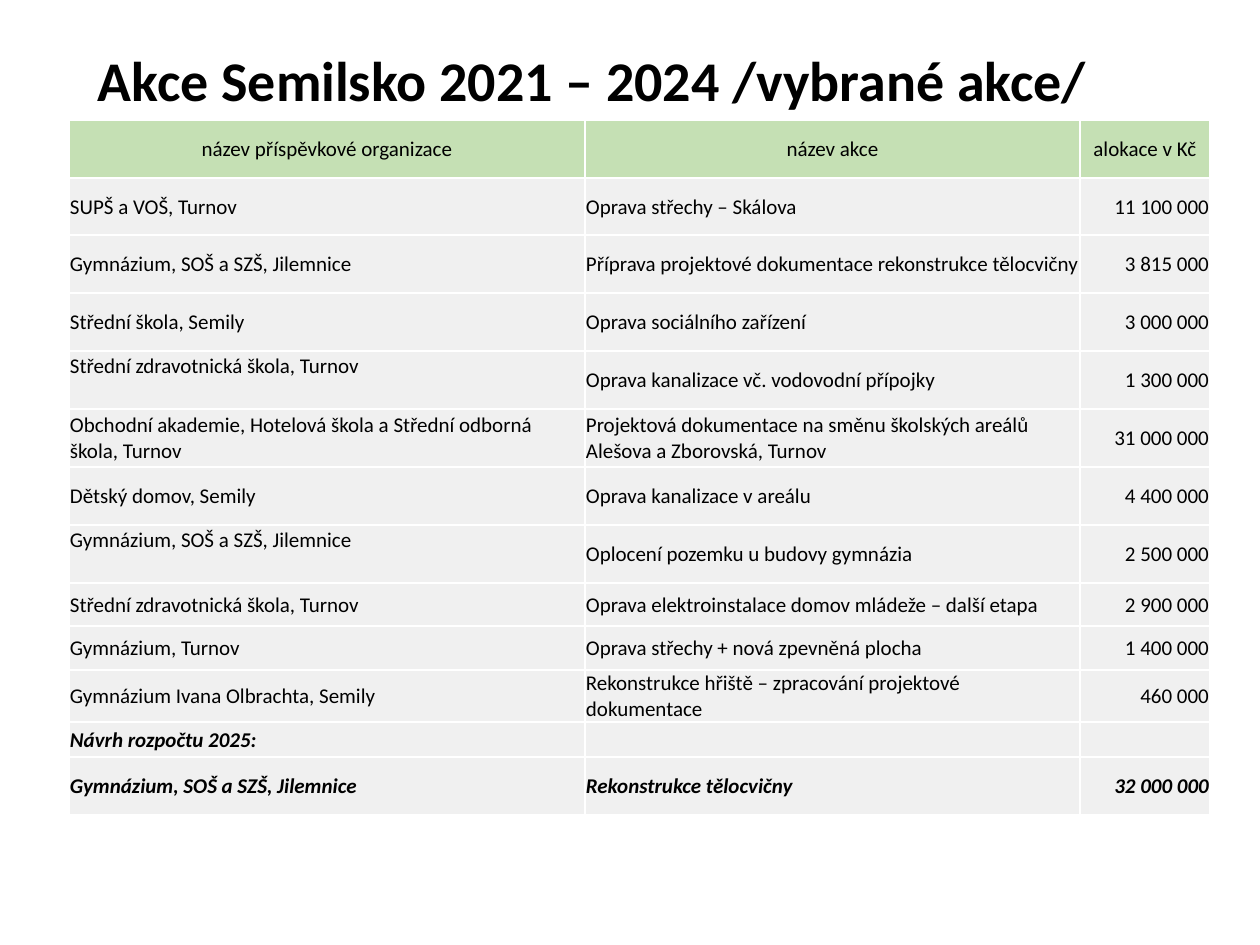
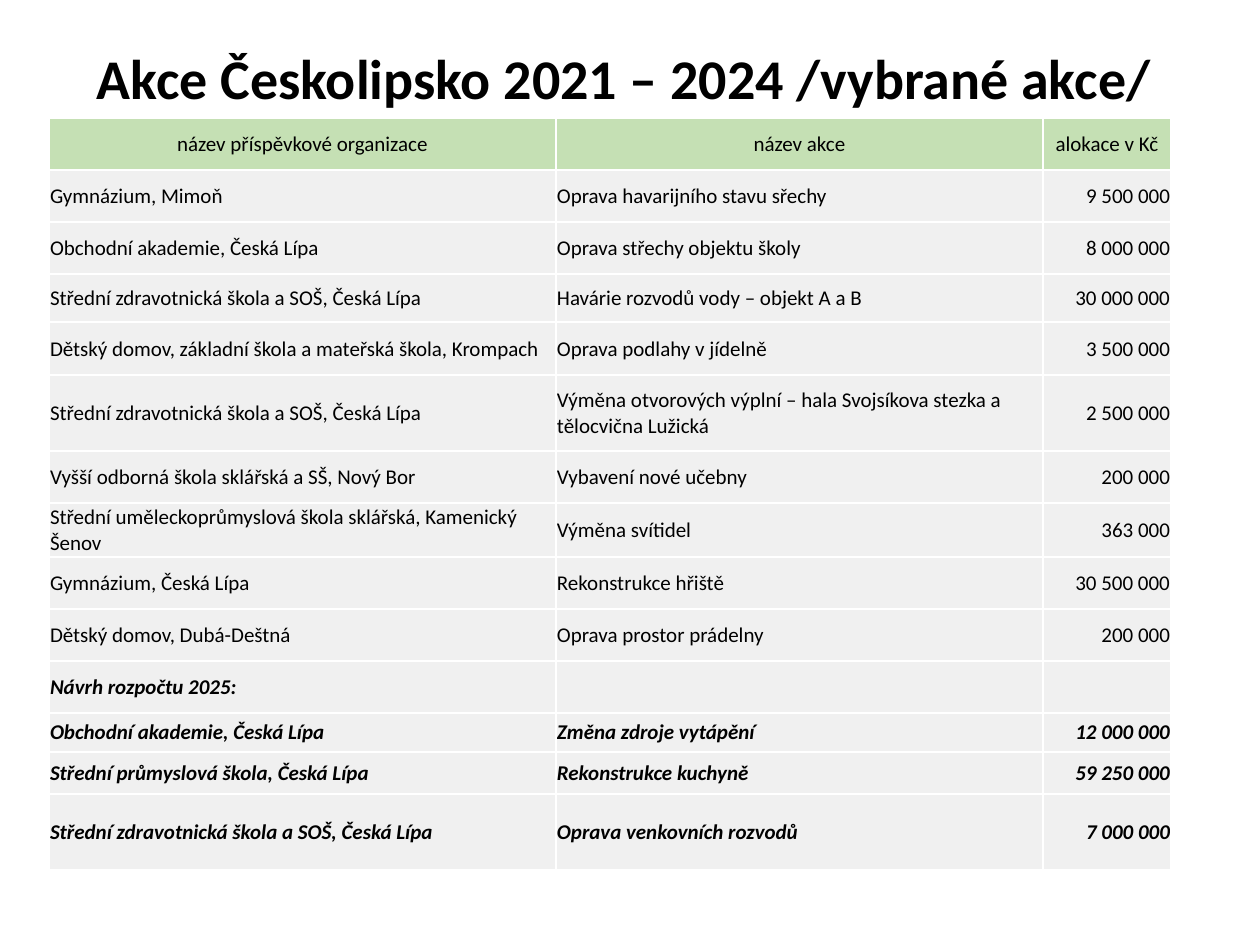
from lxml.etree import SubElement
from pptx import Presentation
from pptx.dml.color import RGBColor
from pptx.enum.text import MSO_ANCHOR as Anchor, MSO_AUTO_SIZE as Fit, PP_ALIGN as Align
from pptx.oxml.ns import qn
from pptx.util import Emu, Pt

BLACK, WHITE, GREEN, GRAY = "000000", "FFFFFF", "C5E0B4", "F0F0F0"
FONT = "Calibri"
SIZE = 12
HEAD = ("název příspěvkové organizace", "název akce", "alokace v Kč")
SIDES = (Align.LEFT, Align.LEFT, Align.RIGHT)
PLAN = ("Návrh rozpočtu 2025:", "", "")

SEMILY = [
    ("SUPŠ a VOŠ, Turnov", "Oprava střechy – Skálova", "11 100 000"),
    ("Gymnázium, SOŠ a SZŠ, Jilemnice", "Příprava projektové dokumentace rekonstrukce tělocvičny", "3 815 000"),
    ("Střední škola, Semily", "Oprava sociálního zařízení", "3 000 000"),
    ("Střední zdravotnická škola, Turnov", "Oprava kanalizace vč. vodovodní přípojky", "1 300 000"),
    ("Obchodní akademie, Hotelová škola a Střední odborná škola, Turnov",
     "Projektová dokumentace na směnu školských areálů Alešova a Zborovská, Turnov", "31 000 000"),
    ("Dětský domov, Semily", "Oprava kanalizace v areálu", "4 400 000"),
    ("Gymnázium, SOŠ a SZŠ, Jilemnice", "Oplocení pozemku u budovy gymnázia", "2 500 000"),
    ("Střední zdravotnická škola, Turnov", "Oprava elektroinstalace domov mládeže – další etapa", "2 900 000"),
    ("Gymnázium, Turnov", "Oprava střechy + nová zpevněná plocha", "1 400 000"),
    ("Gymnázium Ivana Olbrachta, Semily", "Rekonstrukce hřiště – zpracování projektové dokumentace", "460 000"),
    PLAN,
    ("Gymnázium, SOŠ a SZŠ, Jilemnice", "Rekonstrukce tělocvičny", "32 000 000"),
]
LIPA = [
    ("Gymnázium, Mimoň", "Oprava havarijního stavu sřechy", "9 500 000"),
    ("Obchodní akademie, Česká Lípa", "Oprava střechy objektu školy", "8 000 000"),
    ("Střední zdravotnická škola a SOŠ, Česká Lípa", "Havárie rozvodů vody – objekt A a B", "30 000 000"),
    ("Dětský domov, základní škola a mateřská škola, Krompach", "Oprava podlahy v jídelně", "3 500 000"),
    ("Střední zdravotnická škola a SOŠ, Česká Lípa",
     "Výměna otvorových výplní – hala Svojsíkova stezka a tělocvična Lužická", "2 500 000"),
    ("Vyšší odborná škola sklářská a SŠ, Nový Bor", "Vybavení nové učebny", "200 000"),
    ("Střední uměleckoprůmyslová škola sklářská, Kamenický Šenov", "Výměna svítidel", "363 000"),
    ("Gymnázium, Česká Lípa", "Rekonstrukce hřiště", "30 500 000"),
    ("Dětský domov, Dubá-Deštná", "Oprava prostor prádelny", "200 000"),
    PLAN,
    ("Obchodní akademie, Česká Lípa", "Změna zdroje vytápění", "12 000 000"),
    ("Střední průmyslová škola, Česká Lípa", "Rekonstrukce kuchyně", "59 250 000"),
    ("Střední zdravotnická škola a SOŠ, Česká Lípa", "Oprava venkovních rozvodů", "7 000 000"),
]


def px(n):
    return Emu(round(n * 914400 / 126))


def tint(code):
    return RGBColor.from_string(code)


def put(frame, text, size=SIZE, bold=False, slant=False, side=Align.LEFT):
    para = frame.paragraphs[0]
    para.alignment = side
    if not text:
        SubElement(para._p, qn("a:endParaRPr"), sz=str(size * 100))
        return
    run = para.add_run()
    run.text = text
    font = run.font
    font.name, font.size = FONT, Pt(size)
    font.bold, font.italic = bold, slant
    font.color.rgb = tint(BLACK)


def edge(cell):
    props = cell._tc.get_or_add_tcPr()
    for tag in ("a:lnL", "a:lnR", "a:lnT", "a:lnB"):
        line = SubElement(props, qn(tag), w=str(Pt(1)))
        fill = SubElement(line, qn("a:solidFill"))
        SubElement(fill, qn("a:srgbClr"), val=WHITE)


def fill_cell(cell, text, back, top=False, **form):
    edge(cell)
    cell.fill.solid()
    cell.fill.fore_color.rgb = tint(back)
    cell.margin_left = cell.margin_right = px(1)
    cell.margin_top, cell.margin_bottom = px(3 if top else 1), 0
    cell.vertical_anchor = Anchor.TOP if top else Anchor.MIDDLE
    put(cell.text_frame, text, **form)


def add_title(slide, text, left, top):
    box = slide.shapes.title
    box.left, box.top, box.width, box.height = map(px, (left, top, 1110, 81))
    frame = box.text_frame
    frame.word_wrap = True
    frame.auto_size = Fit.NONE
    frame.vertical_anchor = Anchor.TOP
    put(frame, text, size=32, bold=True)


def add_grid(slide, rows, left, top, wide, high, raised=()):
    place = map(px, (left, top, sum(wide), sum(high)))
    grid = slide.shapes.add_table(len(rows) + 1, len(HEAD), *place).table
    grid.first_row = grid.horz_banding = False
    for col, width in zip(grid.columns, wide):
        col.width = px(width)
    for row, height in zip(grid.rows, high):
        row.height = px(height)
    for c, text in enumerate(HEAD):
        fill_cell(grid.cell(0, c), text, GREEN, side=Align.CENTER)
    plan = rows.index(PLAN) + 1
    for r, row in enumerate(rows, 1):
        late = r >= plan
        for c, text in enumerate(row):
            fill_cell(grid.cell(r, c), text, GRAY, top=c == 0 and r in raised,
                      bold=late, slant=late, side=SIDES[c])


def main():
    deck = Presentation()
    deck.slide_width, deck.slide_height = px(1260), px(945)
    look = deck.slide_layouts[5]

    slide = deck.slides.add_slide(look)
    add_title(slide, "Akce Semilsko 2021 – 2024 /vybrané akce/", 85, 39)
    add_grid(slide, SEMILY, 69, 120, (516, 495, 130),
             [58, 57] + [58] * 6 + [43, 44, 39, 35, 58], raised=(4, 7))

    slide = deck.slides.add_slide(look)
    add_title(slide, "Akce Českolipsko 2021 – 2024 /vybrané akce/", 84, 37)
    add_grid(slide, LIPA, 49, 118, (507, 487, 128),
             [52] * 3 + [48, 53, 76, 52, 54] + [52] * 3 + [39, 42, 76])

    deck.save("out.pptx")


if __name__ == "__main__":
    main()
